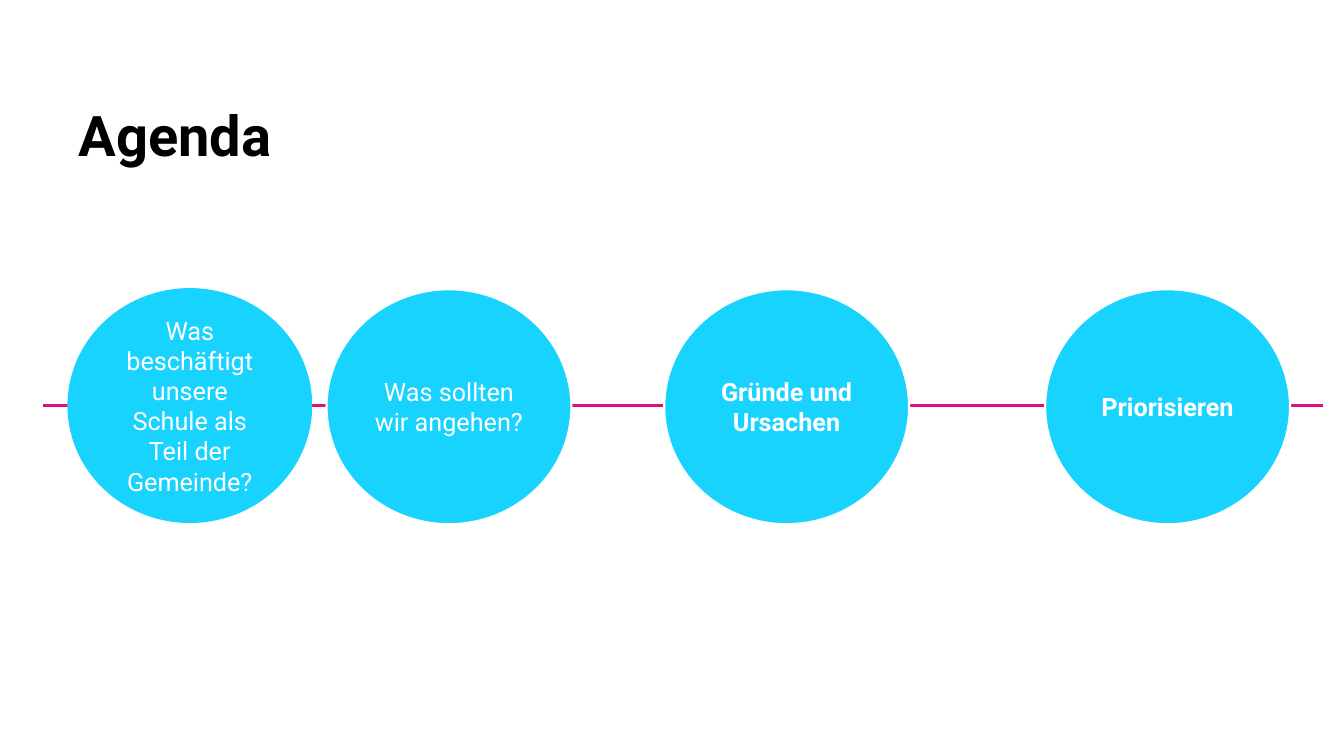
from pptx import Presentation
from pptx.dml.color import RGBColor
from pptx.enum.shapes import MSO_CONNECTOR, MSO_SHAPE
from pptx.enum.text import MSO_ANCHOR, PP_ALIGN
from pptx.oxml.ns import qn
from pptx.util import Cm, Pt
from lxml import etree

STRAIGHT = MSO_CONNECTOR.STRAIGHT
OVAL = MSO_SHAPE.OVAL
TOP, MIDDLE = MSO_ANCHOR.TOP, MSO_ANCHOR.MIDDLE
LEFT, CENTER = PP_ALIGN.LEFT, PP_ALIGN.CENTER

# Content: paragraphs, left and top in cm, bold, outlined
TITLE = "Agenda"
STEPS = [
    (["Was", "beschäftigt unsere Schule als Teil der Gemeinde?"], 1.7, 7.26, False, False),
    (["Was sollten wir angehen?"], 8.23, 7.29, False, True),
    (["Gründe und Ursachen"], 16.74, 7.29, True, True),
    (["Priorisieren"], 26.34, 7.29, True, True),
]
COLORS = {"title": "000000", "timeline": "E50D7E", "step": "19D3FF", "white": "FFFFFF"}
FONT = "Roboto"
STEP_WIDTH, STEP_HEIGHT = Cm(6.17), Cm(5.92)
TIMELINE_LEFT, TIMELINE_RIGHT, TIMELINE_Y = Cm(1.09), Cm(33.35), Cm(10.21)


def color(name):
    return RGBColor.from_string(COLORS[name])


def write(frame, lines, size, ink, bold, align, anchor, spacing=None):
    frame.word_wrap = True
    frame.vertical_anchor = anchor
    for i, line in enumerate(lines):
        paragraph = frame.add_paragraph() if i else frame.paragraphs[0]
        paragraph.alignment = align
        paragraph.line_spacing = spacing
        run = paragraph.add_run()
        run.text = line
        run.font.name = FONT
        run.font.size = Pt(size)
        run.font.bold = bold
        run.font.color.rgb = color(ink)


prs = Presentation()
prs.slide_width, prs.slide_height = Cm(33.87), Cm(19.05)
slide = prs.slides.add_slide(prs.slide_layouts[6])

# Title
title = slide.shapes.add_textbox(Cm(1.73), Cm(2.59), Cm(30.99), Cm(4.65))
write(title.text_frame, [TITLE], 40, "title", True, LEFT, TOP, 0.9)

# Timeline behind the steps
timeline = slide.shapes.add_connector(
    STRAIGHT, TIMELINE_LEFT, TIMELINE_Y, TIMELINE_RIGHT, TIMELINE_Y)
timeline.line.color.rgb = color("timeline")
timeline.line.width = Pt(2.25)
etree.SubElement(timeline._element.spPr, qn("a:effectLst"))

# Agenda steps
for lines, left, top, bold, outlined in STEPS:
    step = slide.shapes.add_shape(OVAL, Cm(left), Cm(top), STEP_WIDTH, STEP_HEIGHT)
    step.shadow.inherit = False
    step.fill.solid()
    step.fill.fore_color.rgb = color("step")
    if outlined:
        step.line.color.rgb = color("white")
        step.line.width = Pt(1.5)
    else:
        step.line.fill.background()
    write(step.text_frame, lines, 18, "white", bold, CENTER, MIDDLE)

prs.save("out.pptx")
